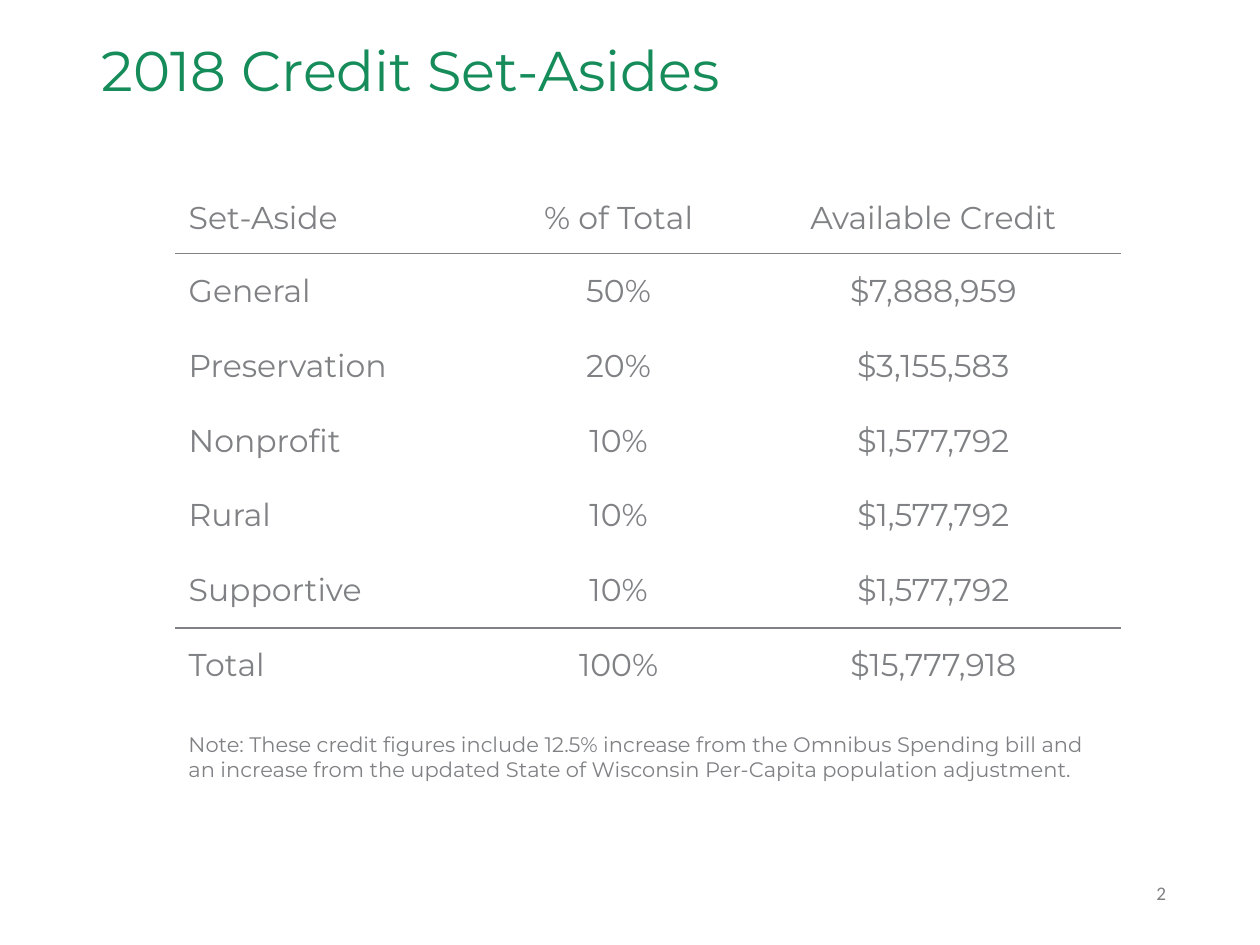
from dataclasses import dataclass

import lxml.etree
import pptx
import pptx.dml.color
import pptx.enum.text
import pptx.oxml.ns
import pptx.util

Cm = pptx.util.Cm
Align = pptx.enum.text.PP_ALIGN
Anchor = pptx.enum.text.MSO_ANCHOR


@dataclass(frozen=True)
class Theme:
    green: str = "158C59"
    gray: str = "808184"
    main_font: str = "Montserrat"
    number_font: str = "Calibri"
    title_size: int = 32
    table_size: int = 18
    note_size: int = 12
    number_size: int = 11
    rule_width: int = 1


@dataclass(frozen=True)
class TextBlock:
    text: str
    left: float
    top: float
    width: float
    height: float
    size: int
    color: str
    font: str
    line_spacing: float = 1.0
    wrap: bool = True


@dataclass(frozen=True)
class SetAside:
    name: str
    share: str
    credit: str


THEME = Theme()

TEXT_BLOCKS = [
    TextBlock("2018 Credit Set-Asides", 1.8, 0.74, 21.31, 2.82,
              THEME.title_size, THEME.green, THEME.main_font, line_spacing=0.9),
    TextBlock("Note: These credit figures include 12.5% increase from the Omnibus "
              "Spending bill and an increase from the updated State of Wisconsin "
              "Per-Capita population adjustment.", 3.55, 14.62, 19.03, 1.28,
              THEME.note_size, THEME.gray, THEME.main_font),
    TextBlock("2", 23.06, 17.65, 0.97, 0.74,
              THEME.number_size, THEME.gray, THEME.number_font, wrap=False),
]

ROWS = [
    SetAside("Set-Aside", "% of Total", "Available Credit"),
    SetAside("General", "50%", "$7,888,959"),
    SetAside("Preservation", "20%", "$3,155,583"),
    SetAside("Nonprofit", "10%", "$1,577,792"),
    SetAside("Rural", "10%", "$1,577,792"),
    SetAside("Supportive", "10%", "$1,577,792"),
    SetAside("Total", "100%", "$15,777,918"),
]
TABLE_LEFT, TABLE_TOP = 3.55, 3.89
COLUMN_WIDTHS = (6.35, 5.14, 7.55)
HEADER_HEIGHT, ROW_HEIGHT = 1.22, 1.51


def format_paragraph(para, size: int, color: str, font: str) -> None:
    for span in para.runs:
        span.font.size = pptx.util.Pt(size)
        span.font.name = font
        span.font.color.rgb = pptx.dml.color.RGBColor.from_string(color)


def add_text(page, block: TextBlock) -> None:
    box = page.shapes.add_textbox(Cm(block.left), Cm(block.top),
                                  Cm(block.width), Cm(block.height))
    box.text_frame.word_wrap = block.wrap
    box.text_frame.text = block.text
    para = box.text_frame.paragraphs[0]
    para.line_spacing = block.line_spacing
    format_paragraph(para, block.size, block.color, block.font)


def add_rule(cell, side: str) -> None:
    """Draw a cell border; side is lnT or lnB."""
    qn = pptx.oxml.ns.qn
    line = lxml.etree.Element(qn(f"a:{side}"), w=str(pptx.util.Pt(THEME.rule_width)))
    fill = lxml.etree.SubElement(line, qn("a:solidFill"))
    lxml.etree.SubElement(fill, qn("a:srgbClr"), val=THEME.gray)
    cell._tc.get_or_add_tcPr().insert(0, line)


def add_credit_table(page, rows: list[SetAside]) -> None:
    heights = [HEADER_HEIGHT] + [ROW_HEIGHT] * (len(rows) - 1)
    frame = page.shapes.add_table(len(rows), len(COLUMN_WIDTHS),
                                  Cm(TABLE_LEFT), Cm(TABLE_TOP),
                                  Cm(sum(COLUMN_WIDTHS)), Cm(sum(heights)))
    table = frame.table
    table.first_row = False
    table.horz_banding = False
    for column, width in zip(table.columns, COLUMN_WIDTHS):
        column.width = Cm(width)

    # Rules run below the header and above the total
    last = len(rows) - 1
    rules = {0: "lnB", 1: "lnT", last - 1: "lnB", last: "lnT"}
    for r, (row, height) in enumerate(zip(rows, heights)):
        table.rows[r].height = Cm(height)
        for c, text in enumerate((row.name, row.share, row.credit)):
            cell = table.cell(r, c)
            cell.fill.background()
            cell.vertical_anchor = Anchor.MIDDLE if r else Anchor.TOP
            cell.text_frame.text = text
            para = cell.text_frame.paragraphs[0]
            para.alignment = Align.CENTER if c else Align.LEFT
            format_paragraph(para, THEME.table_size, THEME.gray, THEME.main_font)
            if r in rules:
                add_rule(cell, rules[r])


def main() -> None:
    deck = pptx.Presentation()
    deck.slide_width, deck.slide_height = Cm(25.4), Cm(19.05)
    page = deck.slides.add_slide(deck.slide_layouts[6])

    # Title, note and page number
    for block in TEXT_BLOCKS:
        add_text(page, block)

    # Set-aside figures
    add_credit_table(page, ROWS)

    deck.save("out.pptx")


if __name__ == "__main__":
    main()
